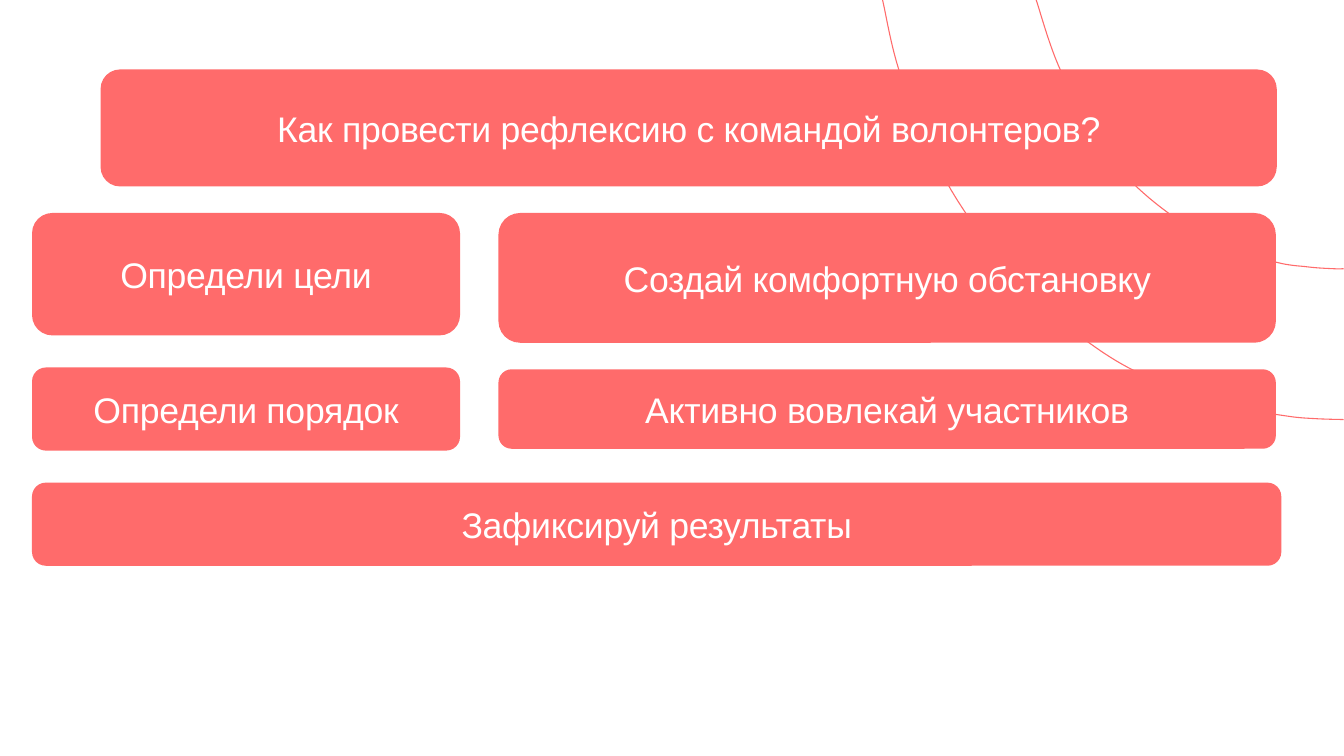
from dataclasses import dataclass

import pptx
import pptx.dml.color
import pptx.enum.shapes
import pptx.enum.text
import pptx.util

Inches = pptx.util.Inches
Point = tuple[float, float]


@dataclass(frozen=True)
class Theme:
    coral: pptx.dml.color.RGBColor = pptx.dml.color.RGBColor(0xFF, 0x6B, 0x6B)
    white: pptx.dml.color.RGBColor = pptx.dml.color.RGBColor(0xFF, 0xFF, 0xFF)
    font: str = "Arial"
    text_size: float = 28
    tracking: int = -20  # hundredths of a point
    arc_width: float = 0.85


@dataclass(frozen=True)
class Card:
    text: str
    left: float
    top: float
    width: float
    height: float


THEME = Theme()
PAGE_WIDTH, PAGE_HEIGHT = 1058, 595.5  # points

# Column and row positions shared by the cards
LEFT, RIGHT = 0.35, 5.45
NARROW, WIDE = 4.68, 8.5
STEPS_TOP = 2.33

TITLE = Card("Как провести рефлексию с командой волонтеров?", 1.1, 0.76, 12.86, 1.28)
STEPS = [
    Card("Определи цели", LEFT, STEPS_TOP, NARROW, 1.34),
    Card("Создай комфортную обстановку", RIGHT, STEPS_TOP, WIDE, 1.42),
    Card("Активно вовлекай участников", RIGHT, 4.04, WIDE, 0.87),
    Card("Зафиксируй результаты", LEFT, 5.28, 13.66, 0.91),
    Card("Определи порядок", LEFT, 4.02, NARROW, 0.91),
]

# Points that each decorative arc passes through
ARCS: list[list[Point]] = [
    [(11.33, 0), (11.57, 0.71), (11.98, 1.51), (12.5, 2.11), (13.24, 2.63),
     (13.92, 2.86), (14.3, 2.92), (14.58, 2.94), (14.69, 2.94)],
    [(9.65, 0), (9.87, 0.89), (10.4, 2.08), (11.21, 3.16), (11.95, 3.78),
     (12.6, 4.15), (13.4, 4.43), (14.06, 4.55), (14.38, 4.58), (14.69, 4.59)],
]


def smooth_curve(points: list[Point], steps: int = 10) -> list[Point]:
    """Interpolate a Catmull-Rom curve through the points."""
    padded = [points[0], *points, points[-1]]
    curve = [points[0]]
    for a, b, c, d in zip(padded, padded[1:], padded[2:], padded[3:]):
        for step in range(1, steps + 1):
            t = step / steps
            x, y = (
                0.5 * (2 * q + (r - p) * t + (2 * p - 5 * q + 4 * r - s) * t**2
                       + (3 * q - p - 3 * r + s) * t**3)
                for p, q, r, s in zip(a, b, c, d)
            )
            curve.append((x, y))
    return curve


def draw_arcs(page: pptx.slide.Slide, arcs: list[list[Point]]) -> None:
    """Draw all arcs as one open outline."""
    builder = None
    for points in arcs:
        curve = [(Inches(x), Inches(y)) for x, y in smooth_curve(points)]
        if builder is None:
            builder = page.shapes.build_freeform(*curve[0])
        else:
            builder.move_to(*curve[0])
        builder.add_line_segments(curve[1:], close=False)
    outline = builder.convert_to_shape()
    outline.shadow.inherit = False
    outline.fill.background()
    outline.line.color.rgb = THEME.coral
    outline.line.width = pptx.util.Pt(THEME.arc_width)


def write_text(
    frame: pptx.text.text.TextFrame,
    text: str,
    *,
    size: float = THEME.text_size,
    color: pptx.dml.color.RGBColor = THEME.white,
    tracking: int = THEME.tracking,
) -> None:
    frame.word_wrap = True
    frame.auto_size = pptx.enum.text.MSO_AUTO_SIZE.NONE
    frame.vertical_anchor = pptx.enum.text.MSO_ANCHOR.MIDDLE
    para = frame.paragraphs[0]
    para.alignment = pptx.enum.text.PP_ALIGN.CENTER
    para.line_spacing = 1.0
    para.space_before = pptx.util.Pt(0)
    span = para.add_run()
    span.text = text
    span.font.name = THEME.font
    span.font.size = pptx.util.Pt(size)
    span.font.color.rgb = color
    span.font._element.set("spc", str(tracking))


def draw_card(page: pptx.slide.Slide, card: Card) -> pptx.shapes.autoshape.Shape:
    box = page.shapes.add_shape(
        pptx.enum.shapes.MSO_SHAPE.ROUNDED_RECTANGLE,
        Inches(card.left), Inches(card.top), Inches(card.width), Inches(card.height),
    )
    box.shadow.inherit = False
    box.fill.solid()
    box.fill.fore_color.rgb = THEME.coral
    box.line.fill.background()
    return box


def draw_title(page: pptx.slide.Slide, card: Card) -> None:
    """Lay the title placeholder over its card."""
    draw_card(page, card)
    title = page.shapes.title
    title.left, title.top = Inches(card.left), Inches(card.top)
    title.width, title.height = Inches(card.width), Inches(card.height)
    write_text(title.text_frame, card.text)
    page.shapes._spTree.append(title._element)  # bring to front


def main() -> None:
    deck = pptx.Presentation()
    deck.slide_width = pptx.util.Pt(PAGE_WIDTH)
    deck.slide_height = pptx.util.Pt(PAGE_HEIGHT)
    deck.element.sldSz.attrib.pop("type", None)  # custom size, not 4:3
    page = deck.slides.add_slide(deck.slide_layouts[5])  # title only

    # Background arcs
    draw_arcs(page, ARCS)

    # Title and steps
    draw_title(page, TITLE)
    for card in STEPS:
        write_text(draw_card(page, card).text_frame, card.text)

    deck.save("out.pptx")


if __name__ == "__main__":
    main()
